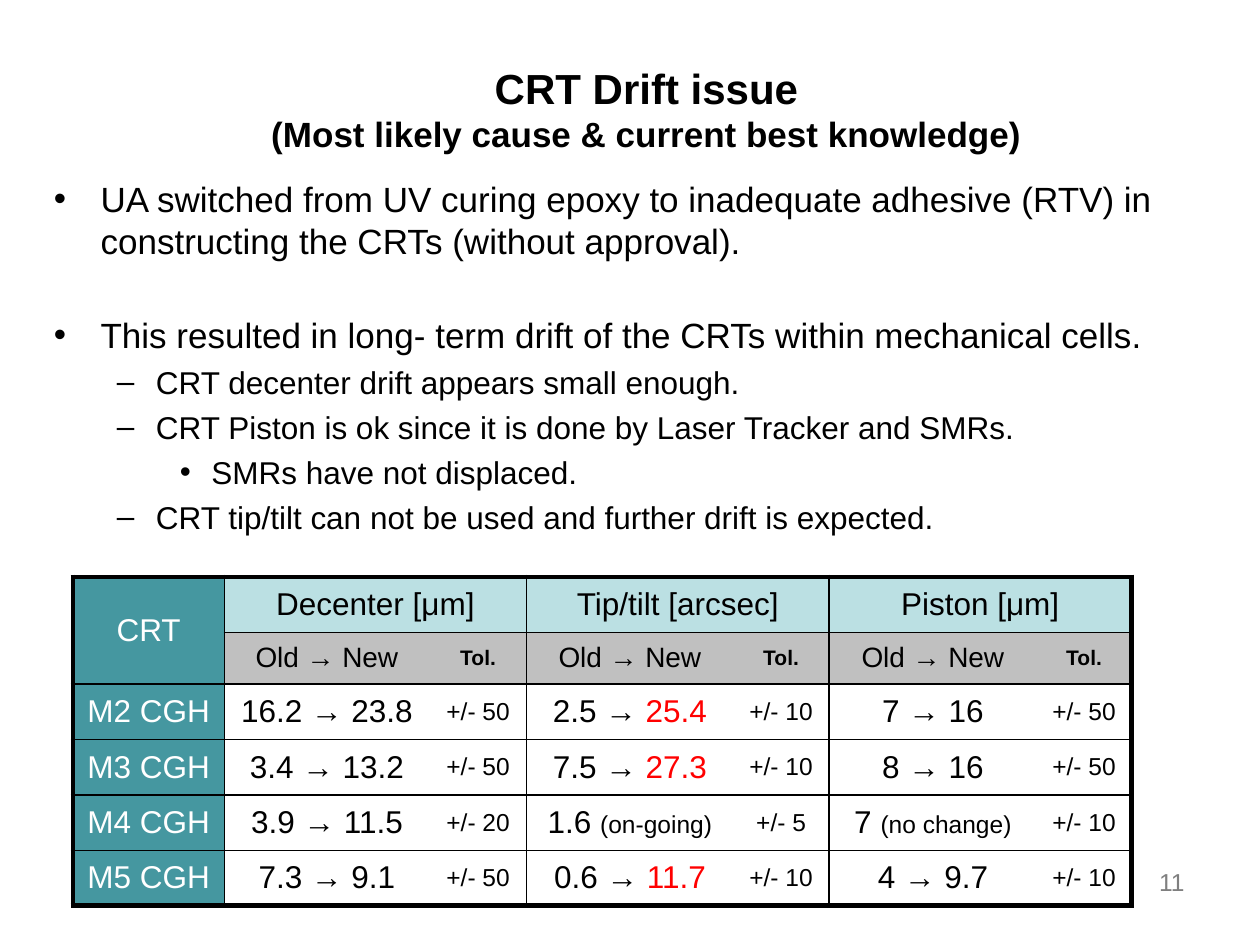
"""Build the CRT drift slide with its bullets and table."""
from dataclasses import dataclass
from typing import NamedTuple

from lxml import etree
from pptx import Presentation
from pptx import util as u
from pptx.dml.color import RGBColor
from pptx.enum import text
from pptx.oxml.ns import qn


@dataclass(frozen=True)
class Theme:
    font: str = "Arial"
    black: str = "000000"
    white: str = "FFFFFF"
    red: str = "FF0000"
    gray: str = "7F7F7F"
    teal: str = "4597A0"
    pale: str = "BBE0E3"
    silver: str = "C0C0C0"
    title: int = 24
    large: int = 20
    main: int = 18
    label: int = 16
    small: int = 14
    tiny: int = 12
    thin: int = 1
    thick: int = 3


T = Theme()
MID = text.PP_ALIGN.CENTER


class Run(NamedTuple):
    words: str
    size: int = T.main
    color: str = T.black
    bold: bool = False


class Level(NamedTuple):
    left: float
    hang: float
    mark: str


class Point(NamedTuple):
    level: int
    size: int
    space: float
    words: str


class Row(NamedTuple):
    name: str
    pairs: list[list[Run]]
    limits: list[str]


LEVELS = [Level(0.37, 0.37, "•"), Level(0.81, 0.31, "–"), Level(1.25, 0.25, "•")]
POINTS = [
    Point(0, T.large, 0, "UA switched from UV curing epoxy to inadequate adhesive (RTV) in "
          "constructing the CRTs (without approval)."),
    Point(0, T.large, 29.5, "This resulted in long- term drift of the CRTs within mechanical cells."),
    Point(1, T.main, 4.2, "CRT decenter drift appears small enough."),
    Point(1, T.main, 4.2, "CRT Piston is ok since it is done by Laser Tracker and SMRs."),
    Point(2, T.main, 4.2, "SMRs have not displaced."),
    Point(1, T.main, 4.2, "CRT tip/tilt can not be used and further drift is expected."),
]
HEADS = ["Decenter [μm]", "Tip/tilt [arcsec]", "Piston [μm]"]
ROWS = [
    Row("M2 CGH", [[Run("16.2 → 23.8")], [Run("2.5 → "), Run("25.4", color=T.red)],
                   [Run("7 → 16")]], ["+/- 50", "+/- 10", "+/- 50"]),
    Row("M3 CGH", [[Run("3.4 → 13.2")], [Run("7.5 → "), Run("27.3", color=T.red)],
                   [Run("8 → 16")]], ["+/- 50", "+/- 10", "+/- 50"]),
    Row("M4 CGH", [[Run("3.9 → 11.5")], [Run("1.6 "), Run("(on-going)", T.small)],
                   [Run("7 "), Run("(no change)", T.small)]], ["+/- 20", "+/- 5", "+/- 10"]),
    Row("M5 CGH", [[Run("7.3 → 9.1")], [Run("0.6 → "), Run("11.7", color=T.red)],
                   [Run("4 → 9.7")]], ["+/- 50", "+/- 10", "+/- 10"]),
]
WIDTHS = [1.2, 1.63, 0.77, 1.64, 0.76, 1.65, 0.75]
HEIGHTS = [0.44, 0.41] + [0.44] * len(ROWS)


def add_runs(para, runs: list[Run]) -> None:
    for item in runs:
        run = para.add_run()
        run.text = item.words
        font = run.font
        font.name, font.size, font.bold = T.font, u.Pt(item.size), item.bold
        font.color.rgb = RGBColor.from_string(item.color)


def add_box(slide, left: float, top: float, width: float, height: float):
    frame = slide.shapes.add_textbox(*map(u.Inches, (left, top, width, height))).text_frame
    frame.word_wrap = True
    return frame


def add_point(para, point: Point) -> None:
    level = LEVELS[point.level]
    props = para._p.get_or_add_pPr()
    props.set("marL", str(u.Inches(level.left)))
    props.set("indent", str(-u.Inches(level.hang)))
    etree.SubElement(props, qn("a:buFont"), typeface=T.font)
    etree.SubElement(props, qn("a:buChar"), char=level.mark)
    para.alignment = text.PP_ALIGN.LEFT
    para.space_before = u.Pt(point.space)
    add_runs(para, [Run(point.words, point.size)])


def add_edge(cell, side: str, width: int) -> None:
    props = cell._tc.get_or_add_tcPr()
    line = etree.SubElement(props, qn(f"a:ln{side}"), w=str(u.Pt(width)))
    if width:
        fill = etree.SubElement(line, qn("a:solidFill"))
        etree.SubElement(fill, qn("a:srgbClr"), val=T.black)
    else:
        etree.SubElement(line, qn("a:noFill"))


def add_frame(grid, row: int, col: int) -> None:
    cell = grid.cell(row, col)
    tall = cell.span_height if cell.is_merge_origin else 1
    wide = cell.span_width if cell.is_merge_origin else 1

    def rule(pos: int, last: int, shown: bool = True) -> int:
        return T.thick if pos in (0, last) else T.thin * shown

    for side, pos in (("L", col), ("R", col + wide)):
        add_edge(cell, side, rule(pos, len(WIDTHS), pos % 2 == 1))
    for side, pos in (("T", row), ("B", row + tall)):
        add_edge(cell, side, rule(pos, len(HEIGHTS)))


def fill_cell(cell, runs: list[Run], color: str = "") -> None:
    cell.vertical_anchor = text.MSO_ANCHOR.MIDDLE
    para = cell.text_frame.paragraphs[0]
    para.alignment = MID
    add_runs(para, runs)
    if color:
        cell.fill.solid()
        cell.fill.fore_color.rgb = RGBColor.from_string(color)
    else:
        cell.fill.background()


def add_grid(slide) -> None:
    area = map(u.Inches, (0.58, 4.58, sum(WIDTHS), sum(HEIGHTS)))
    grid = slide.shapes.add_table(len(HEIGHTS), len(WIDTHS), *area).table
    grid.first_row = grid.horz_banding = False
    for col, width in zip(grid.columns, WIDTHS):
        col.width = u.Inches(width)
    for row, height in zip(grid.rows, HEIGHTS):
        row.height = u.Inches(height)
    grid.cell(0, 0).merge(grid.cell(1, 0))
    starts = range(1, len(WIDTHS), 2)
    for col in starts:
        grid.cell(0, col).merge(grid.cell(0, col + 1))
    for row in range(len(HEIGHTS)):
        for col in range(len(WIDTHS)):
            add_frame(grid, row, col)
    fill_cell(grid.cell(0, 0), [Run("CRT", color=T.white)], T.teal)
    for col, head in zip(starts, HEADS):
        fill_cell(grid.cell(0, col), [Run(head)], T.pale)
        fill_cell(grid.cell(1, col), [Run("Old → New", T.label)], T.silver)
        fill_cell(grid.cell(1, col + 1), [Run("Tol.", T.tiny, bold=True)], T.silver)
    for row, item in enumerate(ROWS, 2):
        fill_cell(grid.cell(row, 0), [Run(item.name, color=T.white)], T.teal)
        for col, pair, limit in zip(starts, item.pairs, item.limits):
            fill_cell(grid.cell(row, col), pair)
            fill_cell(grid.cell(row, col + 1), [Run(limit, T.small)])


def main() -> None:
    deck = Presentation()
    deck.slide_width, deck.slide_height = u.Inches(10), u.Inches(7.5)
    slide = deck.slides.add_slide(deck.slide_layouts[6])

    title = add_box(slide, 1.92, 0.5, 6.42, 0.72)
    title.vertical_anchor = text.MSO_ANCHOR.MIDDLE
    para = title.paragraphs[0]
    para.alignment = MID
    add_runs(para, [Run("CRT Drift issue", T.title, bold=True)])
    para.add_line_break()
    add_runs(para, [Run("(Most likely cause & current best knowledge)", T.large, bold=True)])

    body = add_box(slide, 0.33, 1.33, 9.33, 5.2)
    body.margin_top = u.Inches(0.08)
    for num, point in enumerate(POINTS):
        add_point(body.add_paragraph() if num else body.paragraphs[0], point)

    para = add_box(slide, 7.17, 6.83, 2.33, 0.52).paragraphs[0]
    para.alignment = text.PP_ALIGN.RIGHT
    add_runs(para, [Run("11", T.small, T.gray)])
    add_grid(slide)
    deck.save("out.pptx")


if __name__ == "__main__":
    main()
